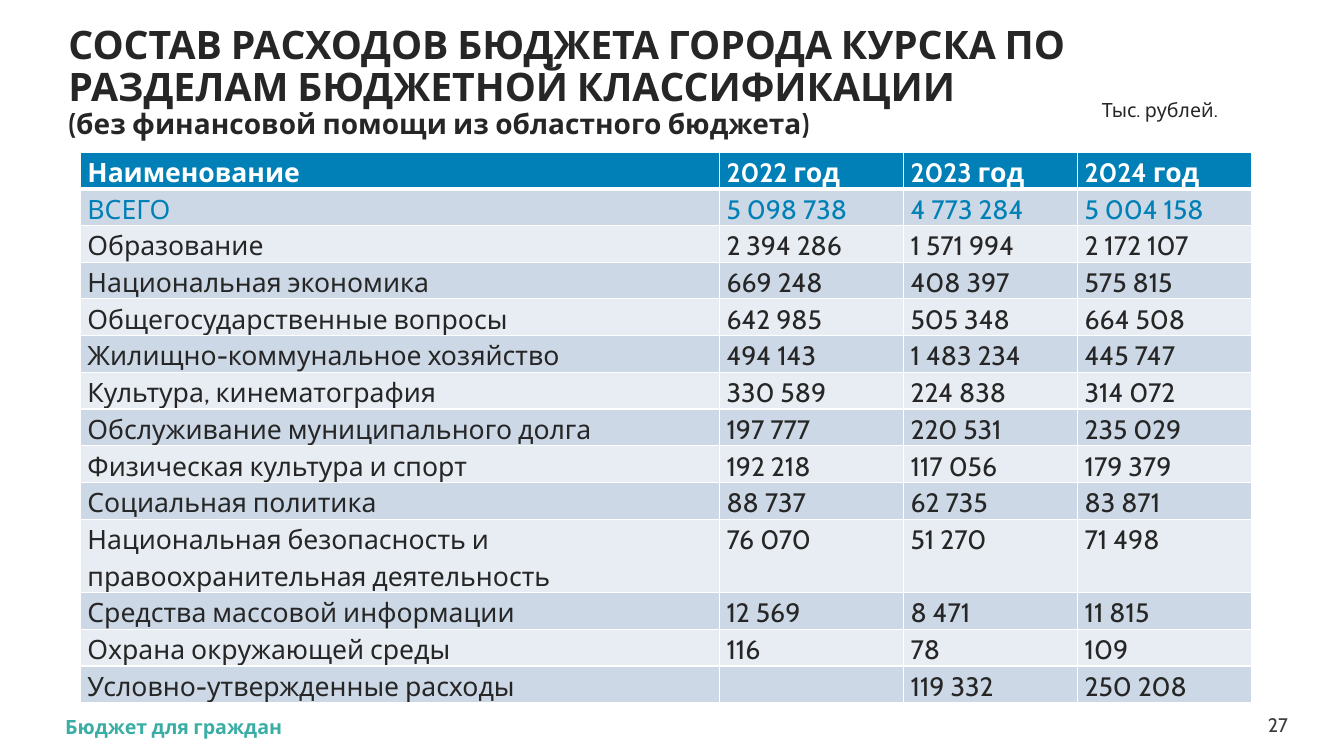
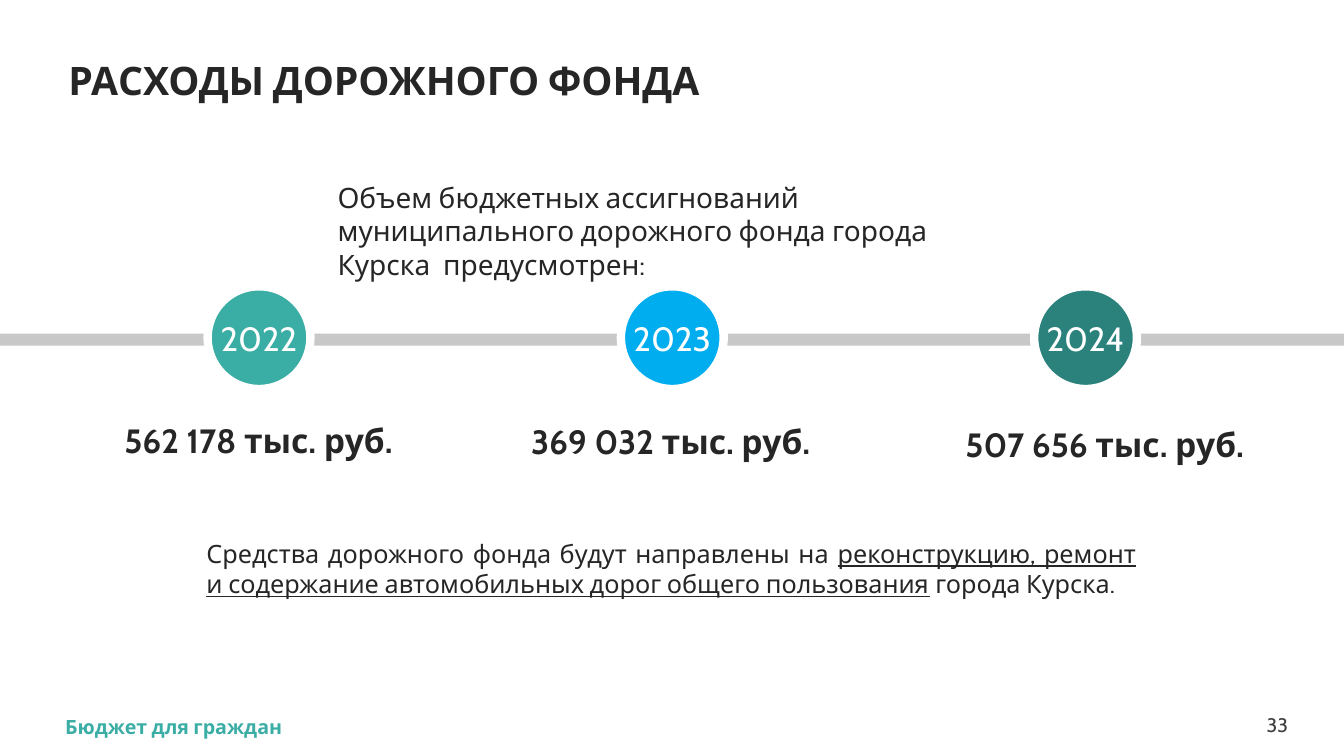
import pptx
import pptx.dml.color
import pptx.enum.shapes
import pptx.enum.text
import pptx.oxml
import pptx.oxml.ns
import pptx.util

Pt = pptx.util.Pt
RGB = pptx.dml.color.RGBColor.from_string
ALIGN = pptx.enum.text.PP_ALIGN
ANCHOR = pptx.enum.text.MSO_ANCHOR
SHAPE = pptx.enum.shapes.MSO_SHAPE

THEME = {
    "font": "Cabin",
    "colors": {"ink": "262626", "white": "FFFFFF", "grey": "3C3C3C", "bar": "C8C8C8",
               "blue": "0080B6", "sky": "00ADEE", "teal": "3AADA5", "deep": "2B827C",
               "band": "CCD8E5", "pale": "E7EDF3"},
    "sizes": {"title": 28, "subtitle": 20, "lead": 20, "note": 18, "small": 14,
              "table": 19, "figure": 24},
}
COLORS, SIZES = THEME["colors"], THEME["sizes"]


def write(tf, runs, size, color="ink", align=ALIGN.LEFT, spacing=None, anchor=ANCHOR.TOP,
          inset=None, wrap=True, **font):
    """Fill a text frame with one paragraph of (text, font changes) runs; "\\n" breaks the line."""
    tf.word_wrap, tf.vertical_anchor = wrap, anchor
    if inset is not None:
        for side in ("left", "right", "top", "bottom"):
            setattr(tf, "margin_" + side, Pt(inset))
    p = tf.paragraphs[0]
    p.alignment, p.line_spacing = align, spacing
    for text, changes in runs:
        if text == "\n":
            p.add_line_break()
            continue
        r = p.add_run()
        r.text = text
        values = {"name": THEME["font"], "size": Pt(SIZES[size]), **font, **changes}
        for key, value in values.items():
            setattr(r.font, key, value)
        r.font.color.rgb = RGB(COLORS[color])


def add_text(s, box, runs, size, **fmt):
    """Add a text box at (left, top, width, height)."""
    sp = s.shapes.add_textbox(*map(Pt, box))
    write(sp.text_frame, runs, size, **fmt)


prs = pptx.Presentation()
prs.slide_width, prs.slide_height = Pt(960), Pt(540)

# Shared title, footer and page number
pages = [
    (27, [("СОСТАВ РАСХОДОВ БЮДЖЕТА ГОРОДА КУРСКА ПО РАЗДЕЛАМ БЮДЖЕТНОЙ КЛАССИФИКАЦИИ", {}),
          ("\n", {}),
          ("(без финансовой помощи из областного бюджета)", {"size": Pt(SIZES["subtitle"])})]),
    (33, [("РАСХОДЫ ДОРОЖНОГО ФОНДА", {})]),
]
for number, title in pages:
    s = prs.slides.add_slide(prs.slide_layouts[6])
    add_text(s, (902, 509, 18, 17), [(str(number), {})], "small", color="grey",
             align=ALIGN.RIGHT, anchor=ANCHOR.MIDDLE, inset=0)
    add_text(s, (46.5, 510.5, 850, 17), [("Бюджет для граждан", {})], "small",
             color="teal", inset=0, bold=True)
    add_text(s, (41.8, 31.7, 855.4, 54.7), title, "title", spacing=0.9,
             anchor=ANCHOR.MIDDLE, bold=True)
table_slide, road_slide = prs.slides

# Slide 1: spending table
add_text(table_slide, (780, 66.2, 102, 24.5), [("Тыс. рублей.", {})], "small")
rows = [
    ("Наименование", "2022 год", "2023 год", "2024 год"),
    ("ВСЕГО", "5 098 738", "4 773 284", "5 004 158"),
    ("Образование", "2 394 286", "1 571 994", "2 172 107"),
    ("Национальная экономика", "669 248", "408 397", "575 815"),
    ("Общегосударственные вопросы", "642 985", "505 348", "664 508"),
    ("Жилищно-коммунальное хозяйство", "494 143", "1 483 234", "445 747"),
    ("Культура, кинематография", "330 589", "224 838", "314 072"),
    ("Обслуживание муниципального долга", "197 777", "220 531", "235 029"),
    ("Физическая культура и спорт", "192 218", "117 056", "179 379"),
    ("Социальная политика", "88 737", "62 735", "83 871"),
    ("Национальная безопасность и правоохранительная деятельность",
     "76 070", "51 270", "71 498"),
    ("Средства массовой информации", "12 569", "8 471", "11 815"),
    ("Охрана окружающей среды", "116", "78", "109"),
    ("Условно-утвержденные расходы", "", "119 332", "250 208"),
]
widths = (456.5, 131.5, 124.3, 124.3)
table = table_slide.shapes.add_table(len(rows), len(widths), Pt(57.5), Pt(108.6), Pt(sum(widths)),
                                     Pt(393)).table
for column, width in zip(table.columns, widths):
    column.width = Pt(width)
for i, row in enumerate(rows):
    table.rows[i].height = Pt(52.4 if len(row[0]) > 40 else 26.2)
    fill = "blue" if i == 0 else ("pale", "band")[i % 2]
    color = {0: "white", 1: "blue"}.get(i, "ink")
    for j, text in enumerate(row):
        cell = table.cell(i, j)
        write(cell.text_frame, [(text, {})], "table", color=color, spacing=1.15, bold=i == 0)
        for side, margin in {"left": 5, "right": 5, "top": 0, "bottom": 0}.items():
            setattr(cell, "margin_" + side, Pt(margin))
        # White rules, thicker around the header's lower edge
        for side in "LRTB":
            thick = (i, side) in ((0, "B"), (1, "T"))
            cell._tc.get_or_add_tcPr().append(pptx.oxml.parse_xml(
                f'<a:ln{side} {pptx.oxml.ns.nsdecls("a")} w="{Pt(3 if thick else 1)}"><a:solidFill>'
                f'<a:srgbClr val="{COLORS["white"]}"/></a:solidFill></a:ln{side}>'))
        cell.fill.solid()
        cell.fill.fore_color.rgb = RGB(COLORS[fill])

# Slide 2: timeline bar
bar = road_slide.shapes.add_shape(SHAPE.RECTANGLE, 0, Pt(238.3), prs.slide_width, Pt(8.6))
bar.shadow.inherit = False
bar.fill.solid()
bar.fill.fore_color.rgb = RGB(COLORS["bar"])
bar.line.fill.background()

# Year circles and their amounts
years = [
    ("2022", "teal", "562 178 тыс. руб.", (52.6, 296.2, 264.2, 36)),
    ("2023", "sky", "369 032 тыс. руб.", (347, 296.9, 264.2, 36)),
    ("2024", "deep", "507 656 тыс. руб.", (663.8, 299.1, 250.6, 36)),
]
for i, (year, color, amount, box) in enumerate(years):
    sp = road_slide.shapes.add_shape(SHAPE.OVAL, Pt(148.3 + 295.2 * i), Pt(204.5), Pt(73.4), Pt(73.4))
    sp.shadow.inherit = False
    sp.fill.solid()
    sp.fill.fore_color.rgb = RGB(COLORS[color])
    sp.line.color.rgb = RGB(COLORS["white"])
    sp.line.width = Pt(6)
    write(sp.text_frame, [(year, {})], "figure", color="white", align=ALIGN.CENTER,
          anchor=ANCHOR.MIDDLE, inset=0, wrap=False)
    add_text(road_slide, box, [(amount, {})], "figure", align=ALIGN.CENTER, bold=True)

# Explanations above and below the timeline
add_text(road_slide, (234, 125.3, 500, 55.4),
         [("Объем бюджетных ассигнований муниципального дорожного фонда города "
           "Курска  предусмотрен:", {})], "lead")
add_text(road_slide, (140.4, 380.9, 678.2, 51),
         [("Средства дорожного фонда будут направлены на ", {}),
          ("реконструкцию, ремонт и содержание автомобильных дорог общего пользования",
           {"underline": True}),
          (" города Курска.", {})], "note", align=ALIGN.JUSTIFY)

prs.save("out.pptx")
